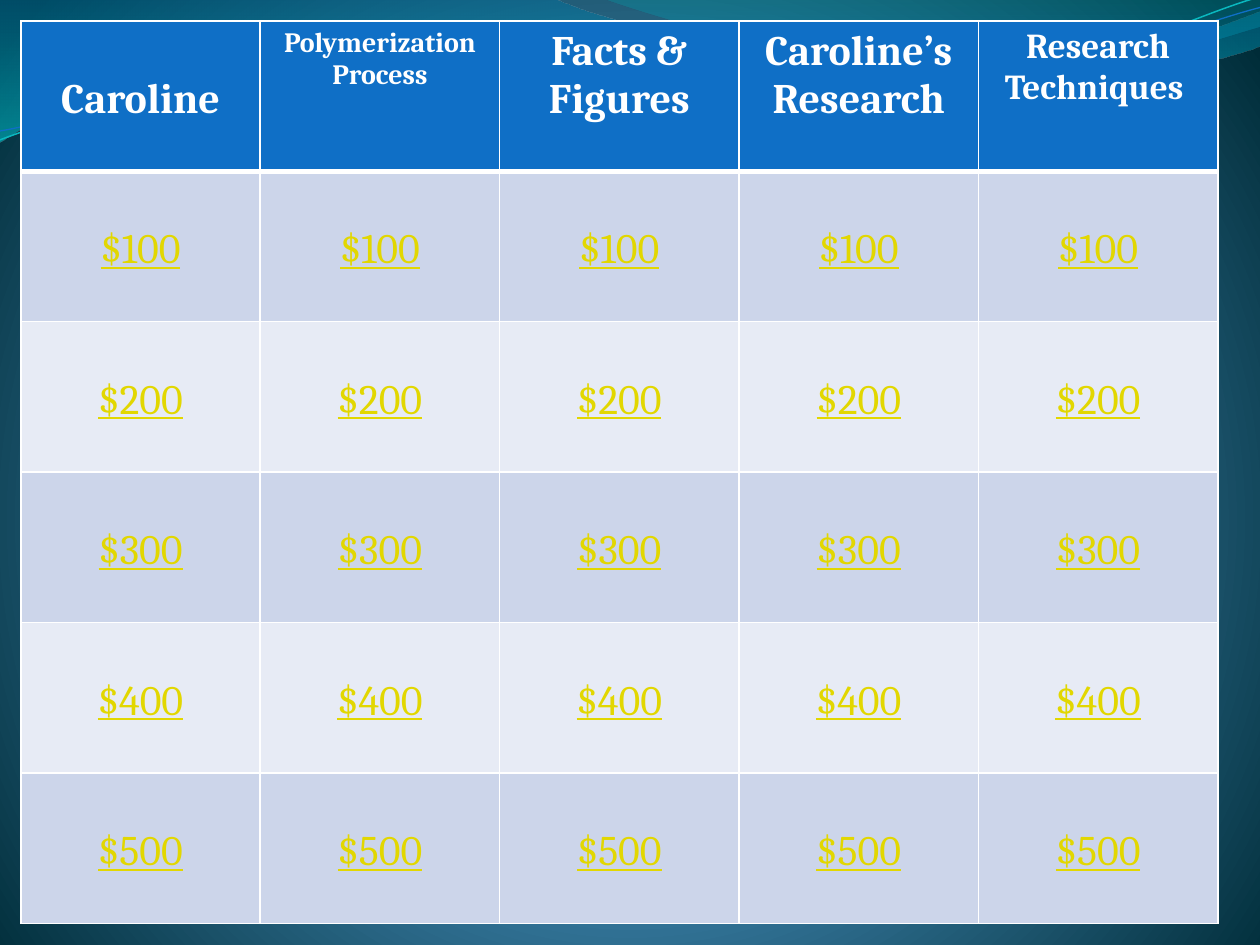
import math
from dataclasses import dataclass

import pptx
import pptx.dml.color
import pptx.enum.text
import pptx.oxml
import pptx.oxml.ns
import pptx.util

Point = tuple[float, float]
Stop = tuple[int, str, int]

COLORS = {
    "white": "FFFFFF",
    "header": "0F6FC6",
    "odd row": "CCD5EA",
    "even row": "E7EBF5",
    "amount": "E2D700",
    "glow": "4AA0D6",
    "halo": "4C98C7",
    "night": "002C38",
    "blue": "0074A1",
    "cyan": "00C6CF",
    "teal": "00A1A9",
    "sea": "008BBF",
    "turquoise": "0AB8BF",
}
FONT = "Cambria"
UNIT = pptx.util.Cm(2.54)
ROW_HEIGHT = pptx.util.Cm(18.2) // 6
COLUMN_WIDTH = pptx.util.Cm(24.13) // 5
TABLE_OFFSET = pptx.util.Cm(0.42)
TOP_MARGIN = pptx.util.Cm(0.13)
LOWERED_MARGIN = pptx.util.Cm(1.1)
DOWNWARD = '<a:lin ang="5400000" scaled="1"/>'
RADIAL = (
    '<a:path path="circle">'
    '<a:fillToRect l="10000" t="110000" r="10000" b="100000"/></a:path>'
)


@dataclass(frozen=True)
class Category:
    title: str
    size: int
    top_margin: int = TOP_MARGIN


@dataclass(frozen=True)
class Wave:
    start: Point
    segments: list[tuple[Point, ...]]
    stops: tuple[Stop, ...] = ()
    line_color: str = ""
    line_width: float = 0
    tilt: float = 0
    center: Point = (0, 0)


CATEGORIES = [
    Category("Caroline", 24, LOWERED_MARGIN),
    Category("Polymerization Process", 16),
    Category("Facts & Figures", 24),
    Category("Caroline’s Research", 24),
    Category("Research Techniques ", 20),
]
AMOUNTS = [f"${value}" for value in range(100, 600, 100)]
BACKGROUND_STOPS = ((0, "glow", 100), (25, "halo", 100), (100, "night", 100))
WAVES = [
    Wave(
        (0, 0),
        [
            ((4.4, -0.01),),
            ((4.76, 0.17), (6.64, 0.63), (7.58, 0.63)),
            ((8.53, 0.63), (9.58, 0.26), (10, 0.09)),
            ((10.01, 0.36),),
            ((9.83, 0.44), (8.7, 0.76), (7.46, 0.75)),
            ((6.22, 0.75), (3.82, 0.28), (2.57, 0.34)),
            ((1.29, 0.36), (0.46, 0.83), (-0.01, 1.13)),
            ((0, 0),),
        ],
        stops=((0, "blue", 45), (100, "cyan", 55)),
    ),
    Wave(
        (4.79, -0.01),
        [
            ((5.09, 0.11), (6.82, 0.62), (7.69, 0.65)),
            ((8.56, 0.69), (9.61, 0.32), (10, 0.21)),
            ((10, 0),),
            ((4.79, -0.01),),
        ],
        stops=((0, "teal", 30), (80, "sea", 45)),
    ),
    Wave(
        (0, 1.11),
        [
            ((0.48, 0.93), (1.58, 0.57), (2.77, 0.52)),
            ((3.95, 0.47), (5.93, 0.89), (7.13, 0.8)),
            ((8.33, 0.71), (9.38, 0.15), (9.98, -0.02)),
        ],
        line_color="turquoise",
        line_width=0.85,
        tilt=-2.7,
        center=(4.99, 0.58),
    ),
    Wave(
        (0, 1.04),
        [
            ((0.47, 0.96), (1.64, 0.61), (2.83, 0.56)),
            ((4.03, 0.51), (5.97, 0.84), (7.17, 0.75)),
            ((8.36, 0.67), (9.41, 0.21), (10, 0.06)),
        ],
        line_color="header",
        line_width=0.75,
        tilt=-2.7,
        center=(5, 0.59),
    ),
]


def rgb(name: str) -> pptx.dml.color.RGBColor:
    return pptx.dml.color.RGBColor.from_string(COLORS[name])


def set_gradient(fill, element, stops: tuple[Stop, ...], direction: str) -> None:
    fill.solid()
    solid = element.find(".//" + pptx.oxml.ns.qn("a:solidFill"))
    stop_list = "".join(
        f'<a:gs pos="{position * 1000}"><a:srgbClr val="{COLORS[name]}">'
        f'<a:alpha val="{opacity * 1000}"/></a:srgbClr></a:gs>'
        for position, name, opacity in stops
    )
    gradient = pptx.oxml.parse_xml(
        f'<a:gradFill {pptx.oxml.ns.nsdecls("a")} rotWithShape="1">'
        f"<a:gsLst>{stop_list}</a:gsLst>{direction}</a:gradFill>"
    )
    solid.getparent().replace(solid, gradient)


def level_point(point: Point, wave: Wave) -> Point:
    angle = math.radians(-wave.tilt)
    x, y = (value - middle for value, middle in zip(point, wave.center))
    return (
        (wave.center[0] + x * math.cos(angle) - y * math.sin(angle)) * UNIT,
        (wave.center[1] + x * math.sin(angle) + y * math.cos(angle)) * UNIT,
    )


def bend_segments(shape, segments: list[tuple[Point, ...]]) -> None:
    lines = iter(list(shape.element.iter(pptx.oxml.ns.qn("a:lnTo"))))
    for segment in segments:
        pieces = [next(lines) for _ in segment]
        if len(pieces) == 3:
            curve = pptx.oxml.parse_xml(f'<a:cubicBezTo {pptx.oxml.ns.nsdecls("a")}/>')
            pieces[0].addprevious(curve)
            for piece in pieces:
                curve.append(piece[0])
                piece.getparent().remove(piece)


def draw_wave(slide, wave: Wave) -> None:
    points = [point for segment in wave.segments for point in segment]
    builder = slide.shapes.build_freeform(*level_point(wave.start, wave))
    builder.add_line_segments(
        [level_point(point, wave) for point in points], close=bool(wave.stops)
    )
    shape = builder.convert_to_shape()
    bend_segments(shape, wave.segments)
    shape.rotation = wave.tilt
    shape.shadow.inherit = False
    if wave.stops:
        set_gradient(shape.fill, shape.element.spPr, wave.stops, DOWNWARD)
        shape.line.fill.background()
    else:
        shape.fill.background()
        shape.line.color.rgb = rgb(wave.line_color)
        shape.line.width = pptx.util.Pt(wave.line_width)


def set_borders(cell, top: float, bottom: float) -> None:
    properties = cell._tc.get_or_add_tcPr()
    widths = {"lnL": 1, "lnR": 1, "lnT": top, "lnB": bottom}
    for index, (tag, width) in enumerate(widths.items()):
        border = pptx.oxml.parse_xml(
            f'<a:{tag} {pptx.oxml.ns.nsdecls("a")} w="{pptx.util.Pt(width)}">'
            f'<a:solidFill><a:srgbClr val="{COLORS["white"]}"/></a:solidFill></a:{tag}>'
        )
        properties.insert(index, border)


def fill_cell(cell, text: str, size: int, color: str, fill: str, top_margin: int) -> None:
    cell.fill.solid()
    cell.fill.fore_color.rgb = rgb(fill)
    cell.margin_top = top_margin
    cell.text = text
    paragraph = cell.text_frame.paragraphs[0]
    paragraph.alignment = pptx.enum.text.PP_ALIGN.CENTER
    paragraph.font.name = FONT
    paragraph.font.size = pptx.util.Pt(size)
    paragraph.font.color.rgb = rgb(color)
    paragraph.font.bold = color == "white"
    paragraph.font.underline = color == "amount"


def draw_board(slide) -> None:
    rows, columns = len(AMOUNTS) + 1, len(CATEGORIES)
    table = slide.shapes.add_table(
        rows, columns, TABLE_OFFSET, TABLE_OFFSET, columns * COLUMN_WIDTH, rows * ROW_HEIGHT
    ).table
    for column, category in enumerate(CATEGORIES):
        header = table.cell(0, column)
        fill_cell(header, category.title, category.size, "white", "header", category.top_margin)
        set_borders(header, 1, 3)
        for row, amount in enumerate(AMOUNTS, start=1):
            cell = table.cell(row, column)
            fill = "odd row" if row % 2 else "even row"
            fill_cell(cell, amount, 24, "amount", fill, LOWERED_MARGIN)
            set_borders(cell, 3 if row == 1 else 1, 1)


def main() -> None:
    presentation = pptx.Presentation()
    presentation.slide_width, presentation.slide_height = 10 * UNIT, pptx.util.Cm(19.05)
    slide = presentation.slides.add_slide(presentation.slide_layouts[6])
    set_gradient(slide.background.fill, slide.element, BACKGROUND_STOPS, RADIAL)
    for wave in WAVES:
        draw_wave(slide, wave)
    draw_board(slide)
    presentation.save("out.pptx")


main()
